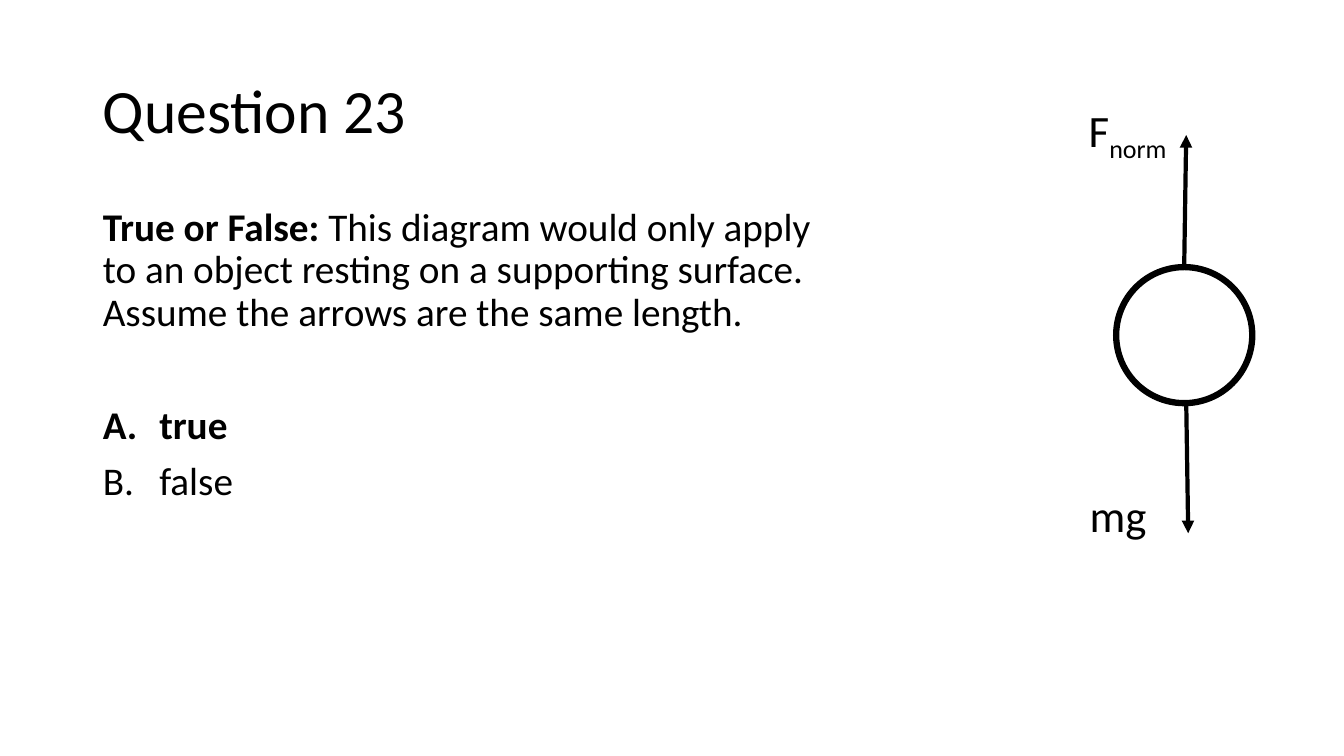
from pptx import Presentation
from pptx.dml.color import RGBColor
from pptx.enum.shapes import MSO_CONNECTOR, MSO_SHAPE
from pptx.enum.text import MSO_ANCHOR, MSO_AUTO_SIZE, PP_ALIGN
from pptx.oxml.ns import qn
from pptx.util import Inches, Pt
from lxml import etree

BLACK = RGBColor(0, 0, 0)
LINE, OVAL = MSO_CONNECTOR.STRAIGHT, MSO_SHAPE.OVAL
LEFT, TOP, MIDDLE = PP_ALIGN.LEFT, MSO_ANCHOR.TOP, MSO_ANCHOR.MIDDLE
FIXED, GROW = MSO_AUTO_SIZE.NONE, MSO_AUTO_SIZE.SHAPE_TO_FIT_TEXT
ROW = {"alignment": LEFT, "line_spacing": 0.9}
STEM = "\u00a0This diagram would only apply to an object resting on a supporting surface. Assume the arrows are the same length."
# Choice, bold, space before (the first choice stands apart)
CHOICES = [("true", True, 50.7), ("false", False, 10)]


def assign(item, values):
    for name, value in values.items():
        setattr(item, name, value)


def place(shape, box):
    assign(shape, dict(zip(("left", "top", "width", "height"), map(Inches, box))))


def add_run(para, text, size, bold=False):
    run = para.add_run()
    run.text = text
    assign(run.font, {"name": "Calibri", "size": Pt(size), "bold": bold})
    run.font.color.rgb = BLACK
    return run


def set_list(para, indent, mark, **attrs):
    props = para._p.get_or_add_pPr()
    props.set("marL", str(Inches(indent)))
    props.set("indent", str(-Inches(indent)))
    etree.SubElement(props, qn("a:" + mark), attrs)


def add_title(slide, box):
    title = slide.shapes.title
    place(title, box)
    frame = title.text_frame
    assign(frame, {"vertical_anchor": MIDDLE, "auto_size": FIXED})
    para = frame.paragraphs[0]
    assign(para, ROW)
    add_run(para, "Question 23", 44)


def add_body(slide, box):
    body = slide.placeholders[1]
    place(body, box)
    frame = body.text_frame
    assign(frame, {"vertical_anchor": TOP, "auto_size": FIXED, "word_wrap": True})

    # Statement
    para = frame.paragraphs[0]
    assign(para, {**ROW, "space_before": Pt(10)})
    set_list(para, 0, "buNone")
    add_run(para, "True or False:", 28, True)
    add_run(para, STEM, 28)

    # Lettered choices
    for text, bold, gap in CHOICES:
        para = frame.add_paragraph()
        assign(para, {**ROW, "space_before": Pt(gap)})
        set_list(para, 0.56, "buAutoNum", type="alphaUcPeriod")
        add_run(para, text, 28, bold)


def add_arrow(slide, start, end):
    arrow = slide.shapes.add_connector(LINE, *map(Inches, start + end))
    arrow.line.color.rgb = BLACK
    arrow.line.width = Pt(3)
    etree.SubElement(arrow.line._get_or_add_ln(), qn("a:tailEnd"), type="triangle")
    etree.SubElement(arrow._element.spPr, qn("a:effectLst"))


def add_label(slide, box, text, sub=""):
    label = slide.shapes.add_textbox(*map(Inches, box))
    frame = label.text_frame
    assign(frame, {"word_wrap": False, "auto_size": GROW})
    para = frame.paragraphs[0]
    add_run(para, text, 32)
    if sub:
        run = add_run(para, sub, 32)
        run.font._element.set("baseline", "-25000")


def add_forces(slide, box):
    x, y, wide, high = box
    size, reach = wide, high * 0.33
    mid = x + wide / 2
    ball_top = y + (high - size) / 2

    # Object
    ball = slide.shapes.add_shape(OVAL, *map(Inches, (x, ball_top, size, size)))
    ball.shadow.inherit = False
    ball.fill.background()
    ball.line.color.rgb = BLACK
    ball.line.width = Pt(4.5)

    # Opposite forces of equal length, each leaning slightly right
    for start, way, shift in ((ball_top, -1, 0), (ball_top + size - 0.02, 1, 0.02)):
        add_arrow(slide, (mid + shift, start), (mid + shift + 0.02, start + way * reach))
    add_label(slide, (x - 0.37, y - 0.37, 1.07, 0.64), "F", "norm")
    add_label(slide, (x - 0.36, y + high - 0.52, 0.77, 0.64), "mg")


def main():
    deck = Presentation()
    assign(deck, {"slide_width": Inches(13.33), "slide_height": Inches(7.5)})
    slide = deck.slides.add_slide(deck.slide_layouts[1])
    add_title(slide, (0.92, 0.4, 11.5, 1.45))
    add_body(slide, (0.92, 2.01, 7.63, 4.76))
    add_forces(slide, (11.07, 1.34, 1.35, 3.97))
    deck.save("out.pptx")


if __name__ == "__main__":
    main()
